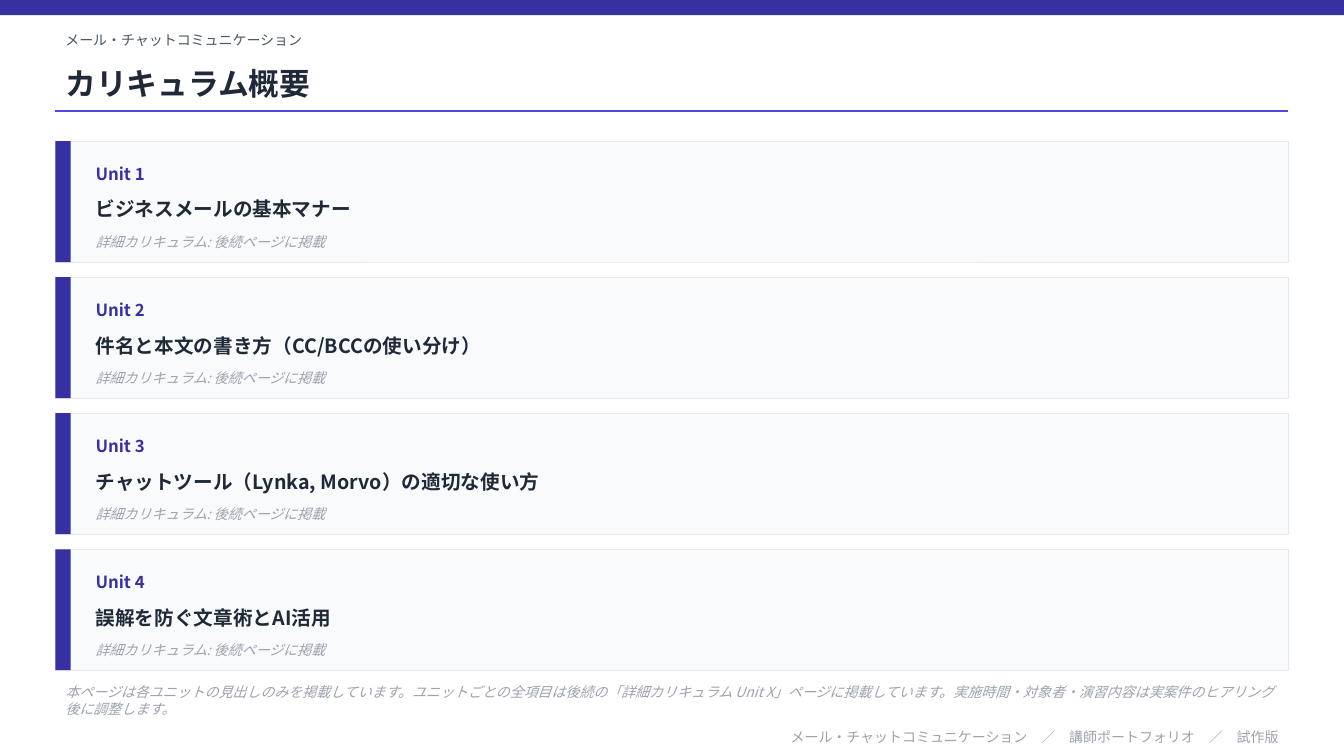
from lxml import etree
from pptx import Presentation
from pptx.dml.color import RGBColor
from pptx.enum import shapes, text
from pptx.oxml import ns
from pptx.util import Pt

FONT = "Noto Sans CJK JP"
INDIGO, INK, GRAY = "3730A3", "1F2937", "9CA3AF"
LEFT, WIDE = 39.6, 880.56
TOP, HIGH, STEP = 100.8, 86.4, 97.2
COURSE = "メール・チャットコミュニケーション"
UNITS = [
    "ビジネスメールの基本マナー",
    "件名と本文の書き方（CC/BCCの使い分け）",
    "チャットツール（Lynka, Morvo）の適切な使い方",
    "誤解を防ぐ文章術とAI活用",
]
DETAIL = "詳細カリキュラム: 後続ページに掲載"
NOTE = ("本ページは各ユニットの見出しのみを掲載しています。"
        "ユニットごとの全項目は後続の「詳細カリキュラム Unit X」ページに掲載しています。"
        "実施時間・対象者・演習内容は実案件のヒアリング後に調整します。")


def color(code):
    return RGBColor.from_string(code)


def write(shape, words, size=10, ink=GRAY, bold=False, italic=False, align="LEFT"):
    frame = shape.text_frame
    frame.word_wrap = True
    frame.auto_size = text.MSO_AUTO_SIZE.NONE
    frame.vertical_anchor = text.MSO_ANCHOR.MIDDLE
    para = frame.paragraphs[0]
    para.alignment = text.PP_ALIGN[align]
    run = para.add_run()
    run.text = words
    font = run.font
    font.name, font.size = FONT, Pt(size)
    font.bold, font.italic = bold, italic
    font.color.rgb = color(ink)
    latin = run._r.get_or_add_rPr().find(ns.qn("a:latin"))
    east = etree.Element(ns.qn("a:ea"), typeface=FONT)
    latin.addnext(east)


def label(slide, words, x, y, w, h, **style):
    box = slide.shapes.add_textbox(Pt(x), Pt(y), Pt(w), Pt(h))
    write(box, words, **style)


def block(slide, x, y, w, h, fill, edge=None):
    box = slide.shapes.add_shape(shapes.MSO_SHAPE.RECTANGLE, Pt(x), Pt(y), Pt(w), Pt(h))
    box.shadow.inherit = False
    box.fill.solid()
    box.fill.fore_color.rgb = color(fill)
    if edge:
        box.line.color.rgb = color(edge)
        box.line.width = Pt(0.5)
    else:
        box.line.fill.background()


def rule(slide, x, y, w, ink):
    line = slide.shapes.add_connector(
        shapes.MSO_CONNECTOR.STRAIGHT, Pt(x), Pt(y), Pt(x + w), Pt(y))
    line.line.color.rgb = color(ink)
    line.line.width = Pt(1)
    etree.SubElement(line._element.spPr, ns.qn("a:effectLst"))


def head(slide, words):
    title = slide.shapes.title
    title.left, title.top = Pt(LEFT), Pt(39.6)
    title.width, title.height = Pt(WIDE), Pt(39.6)
    write(title, words, size=22, ink=INK, bold=True)


def card(slide, num, name):
    y = TOP + (num - 1) * STEP
    x, w = LEFT + 21.6, WIDE - 36
    block(slide, LEFT, y, WIDE, HIGH, "F9FAFB", edge="E5E7EB")
    block(slide, LEFT, y, 10.8, HIGH, INDIGO)
    label(slide, f"Unit {num}", x, y + 8.64, 108, 28.8, size=12, ink=INDIGO, bold=True)
    label(slide, name, x, y + 32.4, w, 32.4, size=14, ink=INK, bold=True)
    label(slide, DETAIL, x, y + 61.2, w, 21.6, italic=True)


def main():
    deck = Presentation()
    deck.slide_width, deck.slide_height = Pt(960), Pt(540)
    slide = deck.slides.add_slide(deck.slide_layouts[5])
    block(slide, 0, 0, 960, 10.8, INDIGO)
    label(slide, COURSE, LEFT, 18, WIDE, 21.6, ink="4B5563")
    head(slide, "カリキュラム概要")
    rule(slide, LEFT, 79.2, WIDE, "4F46E5")
    for num, name in enumerate(UNITS, 1):
        card(slide, num, name)
    label(slide, NOTE, LEFT, 486, WIDE, 28.8, italic=True)
    label(slide, f"{COURSE}　／　講師ポートフォリオ　／　試作版",
          LEFT, 518.4, WIDE, 15.84, align="RIGHT")
    deck.save("out.pptx")


if __name__ == "__main__":
    main()
